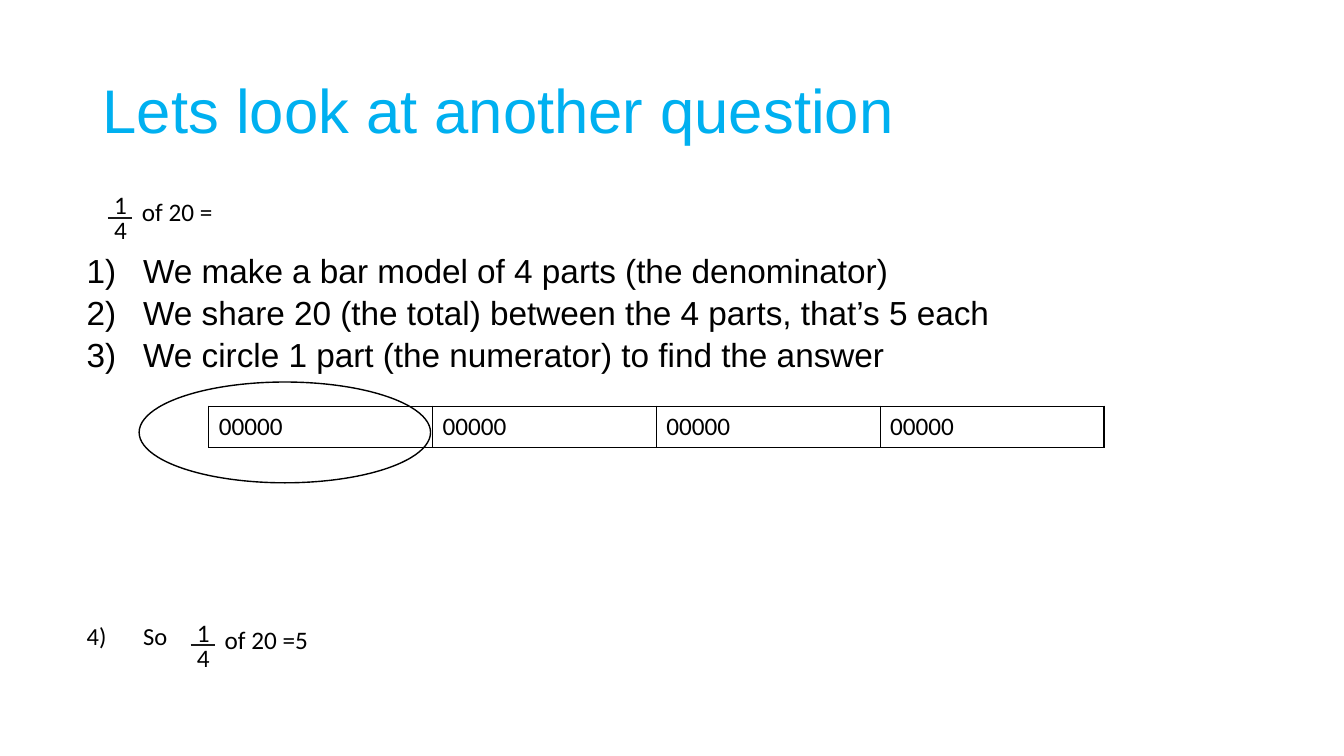
import pptx
import pptx.util
import pptx.dml.color
import pptx.enum.shapes
import pptx.enum.text
import pptx.oxml
import pptx.oxml.ns
import lxml.etree

PX = 9144  # EMU, 100 px to the inch
COLORS = {"title": "00B0F0", "ink": "000000", "bar": "1A1A1A", "cell": "FFFFFF"}
STEPS = [
    "We make a bar model of 4 parts (the denominator)",
    "We share 20 (the total) between the 4 parts, that’s 5 each",
    "We circle 1 part (the numerator) to find the answer",
]
PARTS = ["00000"] * 4


def px(*sizes):
    return [pptx.util.Emu(size * PX) for size in sizes]


def color(name):
    return pptx.dml.color.RGBColor.from_string(COLORS[name])


def style(run, size=18, face="Calibri", ink="ink"):
    run.font.size = pptx.util.Pt(size)
    run.font.name = face
    run.font.color.rgb = color(ink)


def sub(node, tag, **attrs):
    return lxml.etree.SubElement(node, pptx.oxml.ns.qn(tag), **attrs)


def add_box(slide, box):
    frame = slide.shapes.add_textbox(*px(*box)).text_frame
    frame.word_wrap = True
    return frame


def add_title(slide, box, text):
    frame = add_box(slide, box)
    frame.vertical_anchor = pptx.enum.text.MSO_ANCHOR.MIDDLE
    para = frame.paragraphs[0]
    para.line_spacing = 0.9
    run = para.add_run()
    run.text = text
    style(run, 44, "Arial", "title")


def add_steps(slide, box, steps, first, size, face):
    """Numbered steps, counted from first, with a hanging indent."""
    frame = add_box(slide, box)
    frame.margin_left = frame.margin_top = frame.margin_bottom = 0
    for index, step in enumerate(steps):
        para = frame.add_paragraph() if index else frame.paragraphs[0]
        para.line_spacing = pptx.util.Pt(30)
        props = para._p.get_or_add_pPr()
        props.set("marL", str(56 * PX))
        props.set("indent", str(-56 * PX))
        sub(props, "a:buFont", typeface=face)
        sub(props, "a:buAutoNum", type="arabicParenR", startAt=str(first))
        run = para.add_run()
        run.text = step
        style(run, size, face)


def add_sum(slide, box, top, bottom, text):
    """A fraction with its bar, followed by the rest of the sum."""
    left, y, width, height = box
    para = add_box(slide, (left, y, 55, height)).paragraphs[0]
    para.alignment = pptx.enum.text.PP_ALIGN.CENTER
    para.line_spacing = pptx.util.Pt(18)
    for index, digit in enumerate((top, bottom)):
        if index:
            para.add_line_break()
        run = para.add_run()
        run.text = digit
        style(run)
    bar = slide.shapes.add_connector(
        pptx.enum.shapes.MSO_CONNECTOR.STRAIGHT,
        *px(left + 15, y + 28, left + 39, y + 28))
    bar.line.color.rgb = color("bar")
    bar.line.width = pptx.util.Pt(1.5)
    sub(bar._element.spPr, "a:effectLst")
    rest = add_box(slide, (left + 39, y + 2, width - 39, 40))
    run = rest.paragraphs[0].add_run()
    run.text = text
    style(run)


def add_edges(cell):
    props = cell._tc.get_or_add_tcPr()
    for index, side in enumerate(("a:lnL", "a:lnR", "a:lnT", "a:lnB")):
        edge = lxml.etree.Element(pptx.oxml.ns.qn(side), w="12700")
        sub(sub(edge, "a:solidFill"), "a:srgbClr", val=COLORS["ink"])
        props.insert(index, edge)


def add_model(slide, box, parts):
    """The bar model, with its first part circled."""
    left, top, width, height = box
    table = slide.shapes.add_table(1, len(parts), *px(*box)).table
    table.first_row = table.horz_banding = False
    table.rows[0].height = px(height)[0]
    for index, part in enumerate(parts):
        table.columns[index].width = px(width // len(parts))[0]
        cell = table.cell(0, index)
        cell.fill.solid()
        cell.fill.fore_color.rgb = color("cell")
        add_edges(cell)
        run = cell.text_frame.paragraphs[0].add_run()
        run.text = part
        style(run)
    ring = slide.shapes.add_shape(
        pptx.enum.shapes.MSO_SHAPE.OVAL, *px(left - 69, top - 24, 289, 100))
    ring.shadow.inherit = False
    ring.fill.background()
    ring.line.color.rgb = color("ink")
    ring.line.width = pptx.util.Pt(1)


def main():
    deck = pptx.Presentation()
    deck.slide_width, deck.slide_height = px(1333, 750)
    slide = deck.slides.add_slide(deck.slide_layouts[6])
    add_title(slide, (92, 40, 1150, 145), "Lets look at another question")
    add_steps(slide, (86, 246, 1140, 126), STEPS, 1, 23.8, "Arial")
    add_steps(slide, (86, 604, 100, 42), ["So"], 4, 17.5, "Calibri")
    add_model(slide, (207, 403, 888, 41), PARTS)
    add_sum(slide, (92, 188, 218, 61), "1", "4", "of 20 =")
    add_sum(slide, (174, 612, 218, 61), "1", "4", "of 20 =5")
    deck.save("out.pptx")


if __name__ == "__main__":
    main()
